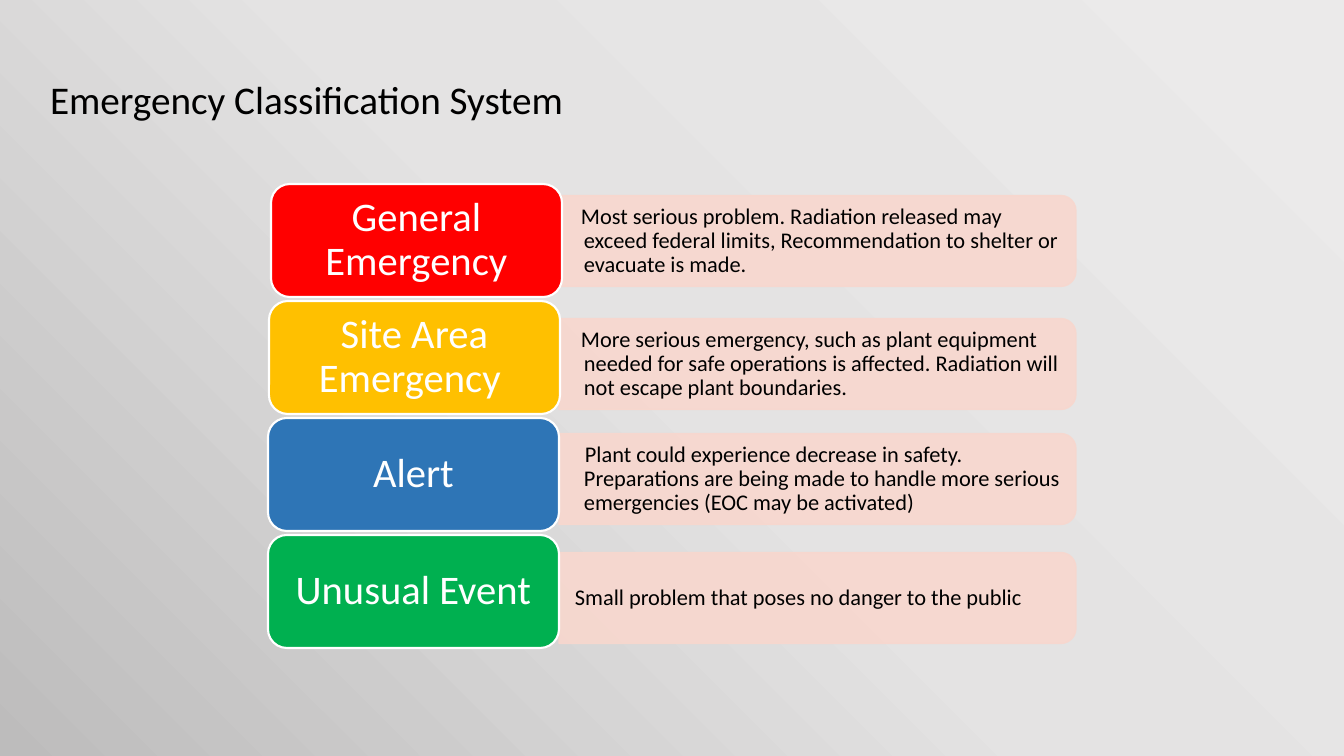
from lxml import etree
from pptx import Presentation
from pptx import util as u
from pptx.dml.color import RGBColor
from pptx.enum import shapes, text
from pptx.oxml.ns import nsdecls, qn

EMU_PER_PX = 914400 / 100.8
FONT = "Calibri"
COLORS = {
    "black": "000000", "white": "FFFFFF", "band": "F8D7CE",
    "red": "FF0000", "amber": "FFC000", "blue": "2E75B6", "green": "00B050",
}
BACKGROUND_STOPS = [(0, "EBEAEA"), (50, "E4E3E3"), (100, "BDBCBC")]

# Label, colour, label left, band centre y, first-line indent, description
LEVELS = [
    ("General Emergency", "red", 271, 241, -3,
     "Most serious problem. Radiation released may exceed federal limits, "
     "Recommendation to shelter or evacuate is made."),
    ("Site Area Emergency ", "amber", 269, 364, -3,
     "More serious emergency, such as plant equipment needed for safe operations "
     "is affected. Radiation will not escape plant boundaries."),
    ("Alert", "blue", 268, 479, 1,
     "Plant could experience decrease in safety. Preparations are being made to "
     "handle more serious emergencies (EOC may be activated)"),
    ("Unusual Event", "green", 268, 598, -9,
     "Small problem that poses no danger to the public"),
]
LABEL_TOP, LABEL_STEP, LABEL_W, LABEL_H = 184, 117, 291, 113
BAND_LEFT, BAND_W, BAND_H = 559, 517, 91
DETAIL_LEFT, DETAIL_W, DETAIL_H = 558, 513, 82


def px(length):
    return u.Emu(round(length * EMU_PER_PX))


def rgb(name):
    return RGBColor.from_string(COLORS[name])


def write(frame, content, size, color="black", align=text.PP_ALIGN.LEFT,
          anchor=text.MSO_ANCHOR.MIDDLE, insets=(10, 5), hanging=None):
    frame.word_wrap = True
    frame.auto_size = text.MSO_AUTO_SIZE.NONE
    frame.vertical_anchor = anchor
    frame.margin_left = frame.margin_right = px(insets[0])
    frame.margin_top = frame.margin_bottom = px(insets[1])
    paragraph = frame.paragraphs[0]
    paragraph.text = content
    paragraph.alignment = align
    paragraph.line_spacing = 0.9
    if hanging:
        margin, indent = hanging
        properties = paragraph._p.get_or_add_pPr()
        properties.set("marL", str(px(margin)))
        properties.set("indent", str(px(indent)))
    font = paragraph.runs[0].font
    font.name, font.size, font.color.rgb = FONT, u.Pt(size), rgb(color)


def add_block(slide, kind, left, top, width, height, fill, line, weight):
    block = slide.shapes.add_shape(kind, px(left), px(top), px(width), px(height))
    block.shadow.inherit = False
    block.fill.solid()
    block.fill.fore_color.rgb = rgb(fill)
    block.line.color.rgb = rgb(line)
    block.line.width = u.Pt(weight)
    return block


def add_band(slide, middle):
    # Turned a quarter so that the rounded corners face right
    left = BAND_LEFT + (BAND_W - BAND_H) / 2
    band = add_block(slide, shapes.MSO_SHAPE.ROUND_2_SAME_RECTANGLE, left,
                     middle - BAND_W / 2, BAND_H, BAND_W, "band", "band", 1)
    band.rotation = 90
    for color in band._element.spPr.iter(qn("a:srgbClr")):
        etree.SubElement(color, qn("a:alpha"), val="90000")


def add_detail(slide, content, middle, indent):
    detail = slide.shapes.add_textbox(px(DETAIL_LEFT), px(middle - DETAIL_H / 2),
                                      px(DETAIL_W), px(DETAIL_H))
    write(detail.text_frame, content, 16, insets=(7, 3), hanging=(19, indent))


def add_label(slide, content, color, left, top):
    label = add_block(slide, shapes.MSO_SHAPE.ROUNDED_RECTANGLE, left, top,
                      LABEL_W, LABEL_H, color, "white", 1.5)
    write(label.text_frame, content, 29, "white", text.PP_ALIGN.CENTER,
          insets=(17, 11))


def paint_background(slide):
    slide.background.fill.solid()
    solid = slide.element.find(".//" + qn("p:bgPr")).find(qn("a:solidFill"))
    stops = "".join(f'<a:gs pos="{place * 1000}"><a:srgbClr val="{color}"/></a:gs>'
                    for place, color in BACKGROUND_STOPS)
    gradient = etree.fromstring(
        f'<a:gradFill {nsdecls("a")} rotWithShape="1"><a:gsLst>{stops}</a:gsLst>'
        '<a:path path="circle"><a:fillToRect l="100000" b="100000"/></a:path>'
        '</a:gradFill>')
    solid.getparent().replace(solid, gradient)


def set_title(slide, content):
    title = slide.shapes.title
    title.left, title.top, title.width, title.height = map(px, (40, 0, 794, 128))
    write(title.text_frame, content, 28, anchor=text.MSO_ANCHOR.BOTTOM)


def main():
    deck = Presentation()
    deck.slide_width, deck.slide_height = px(1344), px(756)
    slide = deck.slides.add_slide(deck.slide_layouts[5])
    paint_background(slide)
    set_title(slide, "Emergency Classification System")

    # Levels, from the most to the least serious
    for row, (name, color, left, middle, indent, meaning) in enumerate(LEVELS):
        add_band(slide, middle)
        add_detail(slide, meaning, middle, indent)
        add_label(slide, name, color, left, LABEL_TOP + row * LABEL_STEP)

    deck.save("out.pptx")


if __name__ == "__main__":
    main()
